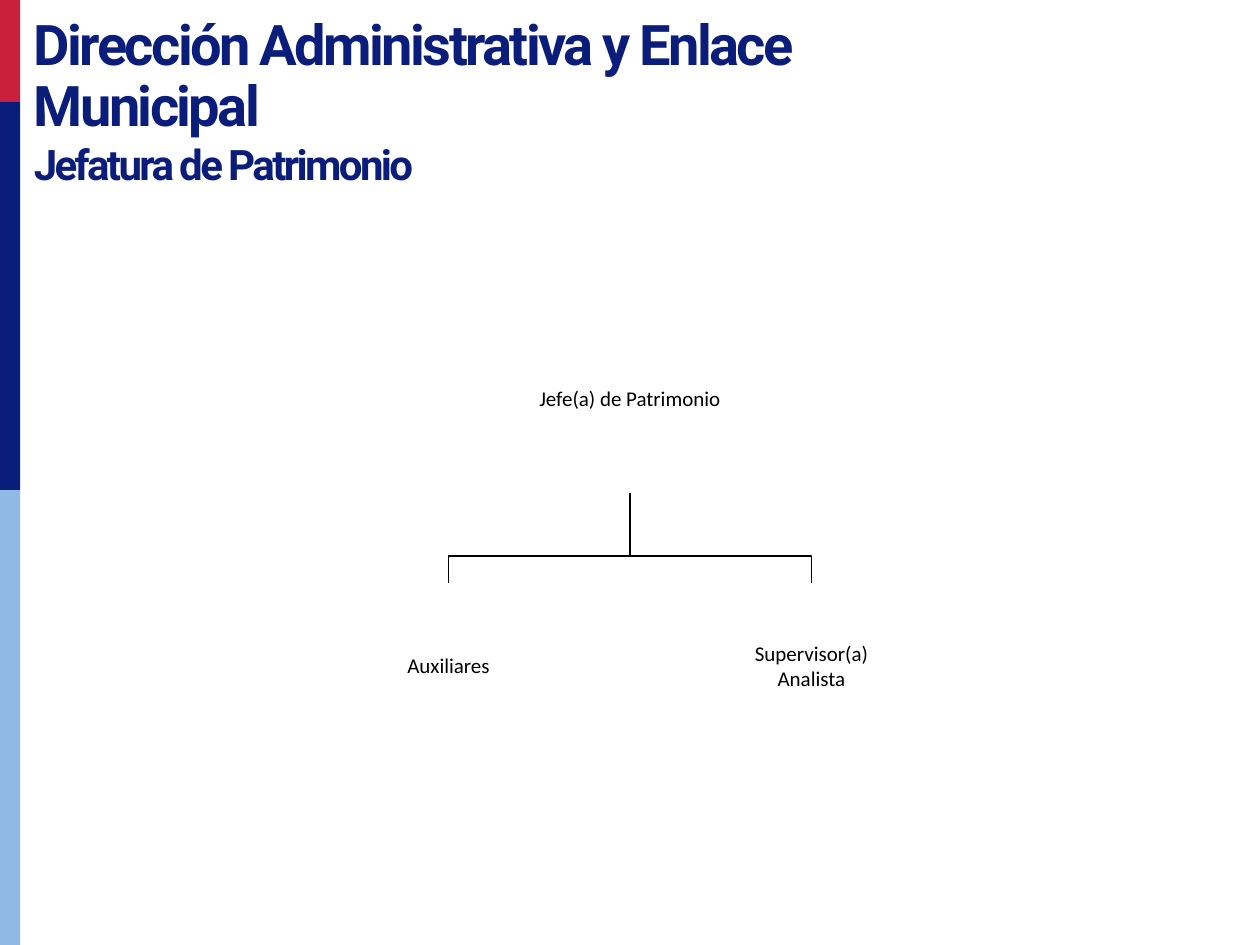
from typing import NamedTuple

from pptx import Presentation
from pptx import util as u
from pptx.dml.color import RGBColor
from pptx.enum import shapes, text

WIDE, HIGH = 10, 7.5
COLORS = {"red": "CA1F3D", "navy": "0A1D7A", "sky": "8FBAE5",
          "white": "FFFFFF", "black": "000000"}


class Band(NamedTuple):
    color: str
    top: float
    end: float


class Post(NamedTuple):
    """A box of the chart, placed by the middle of its top side."""
    lines: list[str]
    mid: float
    top: float
    wide: float
    high: float


class Line(NamedTuple):
    words: str
    size: int
    space: float


BAR = 0.16
BANDS = [Band("red", 0, 0.81), Band("navy", 0.81, 3.89),
         Band("sky", 3.89, HIGH)]
TITLE = [Line("Dirección Administrativa y Enlace Municipal", 32, 0.9),
         Line("Jefatura de Patrimonio", 24, 1)]
MID, STEP = WIDE / 2, 1.44
ROW, BEND = 4.63, 4.41
HEAD = Post(["Jefe(a) de Patrimonio"], MID, 2.41, 2.8, 1.5)
STAFF = [Post(["Supervisor(a)", "Analista"], MID + STEP, ROW, 2.45, 1.3),
         Post(["Auxiliares"], MID - STEP, ROW, 2.45, 1.3)]


def shade(name: str) -> RGBColor:
    return RGBColor.from_string(COLORS[name])


def draw_box(slide, color: str, *place: float):
    box = slide.shapes.add_shape(shapes.MSO_SHAPE.RECTANGLE,
                                 *map(u.Inches, place))
    box.shadow.inherit = False
    box.fill.solid()
    box.fill.fore_color.rgb = shade(color)
    box.line.fill.background()
    return box


def draw_title(slide) -> None:
    box = slide.shapes.add_textbox(*map(u.Inches, (0.17, 0.09, 7.46, 1.47)))
    frame = box.text_frame
    frame.word_wrap = True
    for i, line in enumerate(TITLE):
        para = frame.add_paragraph() if i else frame.paragraphs[0]
        run = para.add_run()
        run.text = line.words
        run._r.get_or_add_rPr().set("spc", "-150")
        para.line_spacing = line.space
        font = para.font
        font.name, font.size, font.bold = "Roboto", u.Pt(line.size), True
        font.color.rgb = shade("navy")


def draw_link(slide, head: Post, post: Post) -> None:
    """Draw the bent line from under the head down to a post."""
    spots = [(head.mid, head.top + head.high), (head.mid, BEND),
             (post.mid, BEND), (post.mid, post.top)]
    start, *rest = [(u.Inches(x), u.Inches(y)) for x, y in spots]
    pen = slide.shapes.build_freeform(*start)
    pen.add_line_segments(rest, close=False)
    link = pen.convert_to_shape()
    link.shadow.inherit = False
    link.fill.background()
    link.line.color.rgb = shade("black")
    link.line.width = u.Pt(1)


def draw_post(slide, post: Post) -> None:
    box = draw_box(slide, "white", post.mid - post.wide / 2, post.top,
                   post.wide, post.high)
    frame = box.text_frame
    frame.word_wrap = True
    frame.vertical_anchor = text.MSO_ANCHOR.MIDDLE
    frame.margin_left = frame.margin_right = u.Inches(0.01)
    frame.margin_top = frame.margin_bottom = u.Inches(0.01)
    frame.text = "\n".join(post.lines)
    for para in frame.paragraphs:
        para.alignment = text.PP_ALIGN.CENTER
        para.font.name, para.font.size = "Calibri", u.Pt(12)
        para.font.color.rgb = shade("black")


def main() -> None:
    deck = Presentation()
    deck.slide_width, deck.slide_height = u.Inches(WIDE), u.Inches(HIGH)
    slide = deck.slides.add_slide(deck.slide_layouts[6])
    for band in BANDS:
        draw_box(slide, band.color, 0, band.top, BAR, band.end - band.top)
    draw_title(slide)
    for post in STAFF:
        draw_link(slide, HEAD, post)
    for post in [HEAD, *STAFF]:
        draw_post(slide, post)
    deck.save("out.pptx")


if __name__ == "__main__":
    main()
